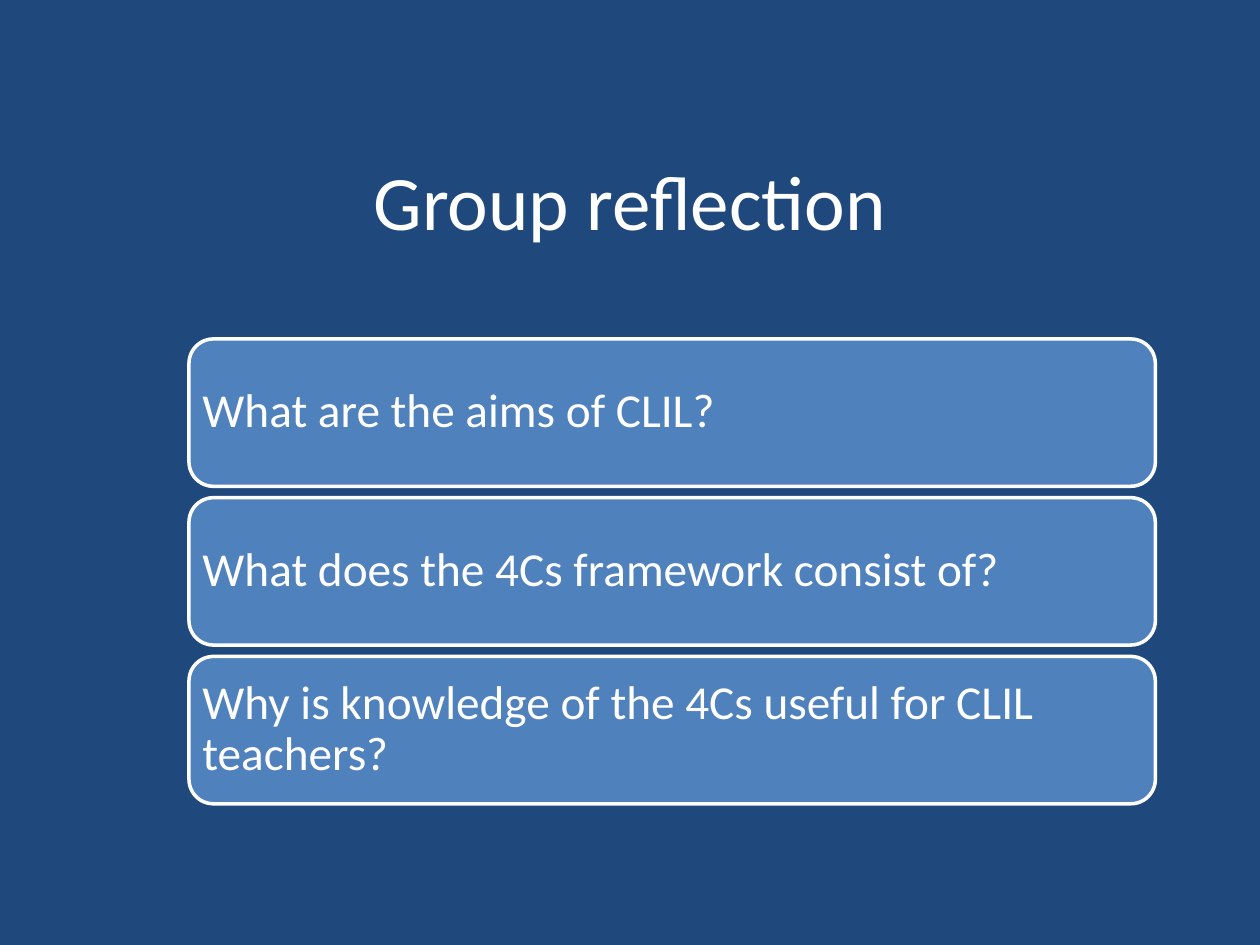
from dataclasses import dataclass

from pptx import Presentation
from pptx.dml.color import RGBColor
from pptx.enum.shapes import MSO_SHAPE
from pptx.enum.text import MSO_ANCHOR, PP_ALIGN
from pptx.util import Inches, Pt

ROUND = MSO_SHAPE.ROUNDED_RECTANGLE
MIDDLE = MSO_ANCHOR.MIDDLE
LEFT, CENTER = PP_ALIGN.LEFT, PP_ALIGN.CENTER


@dataclass(frozen=True)
class Theme:
    """Colours, font and type sizes of the slide."""
    back: RGBColor = RGBColor(0x1F, 0x49, 0x7D)
    card: RGBColor = RGBColor(0x4F, 0x81, 0xBD)
    ink: RGBColor = RGBColor(0xFF, 0xFF, 0xFF)
    font: str = "Calibri"
    head: int = 44
    body: int = 27
    rule: int = 2


THEME = Theme()
WIDE, HIGH = Inches(10), Inches(7.5)
HEAD_BOX = (Inches(0.75), Inches(0.76), Inches(8.5), Inches(1.65))
LIST_BOX = (Inches(1.5), Inches(2.69), Inches(7.67), Inches(3.69))
GAP = Inches(0.09)
ITEMS = (
    "What are the aims of CLIL?",
    "What does the 4Cs framework consist of?",
    "Why is knowledge of the 4Cs useful for CLIL teachers?",
)


def apply(part, values):
    """Set each attribute of a part from a dict."""
    for name, value in values.items():
        setattr(part, name, value)


def write(shape, text, size, align, frame, space=1.0):
    """Fill a shape with one formatted paragraph."""
    box = shape.text_frame
    box.text = text
    apply(box, {"word_wrap": True, "vertical_anchor": MIDDLE, **frame})
    para = box.paragraphs[0]
    apply(para, {"alignment": align, "line_spacing": space})
    font = para.runs[0].font
    apply(font, {"name": THEME.font, "size": Pt(size)})
    font.color.rgb = THEME.ink


def add_head(slide, box, text):
    """Place the title in its box."""
    title = slide.shapes.title
    apply(title, dict(zip(("left", "top", "width", "height"), box)))
    write(title, text, THEME.head, CENTER, {})


def add_list(slide, box, items):
    """Stack equal rounded cards down the box."""
    left, top, width, height = box
    step = (height + GAP) // len(items)
    frame = {"margin_left": Inches(0.05), "margin_right": Inches(0.05),
             "margin_top": Inches(0.05), "margin_bottom": Inches(0.05)}
    for row, text in enumerate(items):
        card = slide.shapes.add_shape(
            ROUND, left, top + row * step, width, step - GAP)
        card.shadow.inherit = False
        card.fill.solid()
        card.fill.fore_color.rgb = THEME.card
        card.line.color.rgb = THEME.ink
        card.line.width = Pt(THEME.rule)
        write(card, text, THEME.body, LEFT, frame, 0.9)


def main():
    """Build and save the slide."""
    deck = Presentation()
    apply(deck, {"slide_width": WIDE, "slide_height": HIGH})
    slide = deck.slides.add_slide(deck.slide_layouts[5])
    fill = slide.background.fill
    fill.solid()
    fill.fore_color.rgb = THEME.back
    add_head(slide, HEAD_BOX, "Group reflection")
    add_list(slide, LIST_BOX, ITEMS)
    deck.save("out.pptx")


if __name__ == "__main__":
    main()
